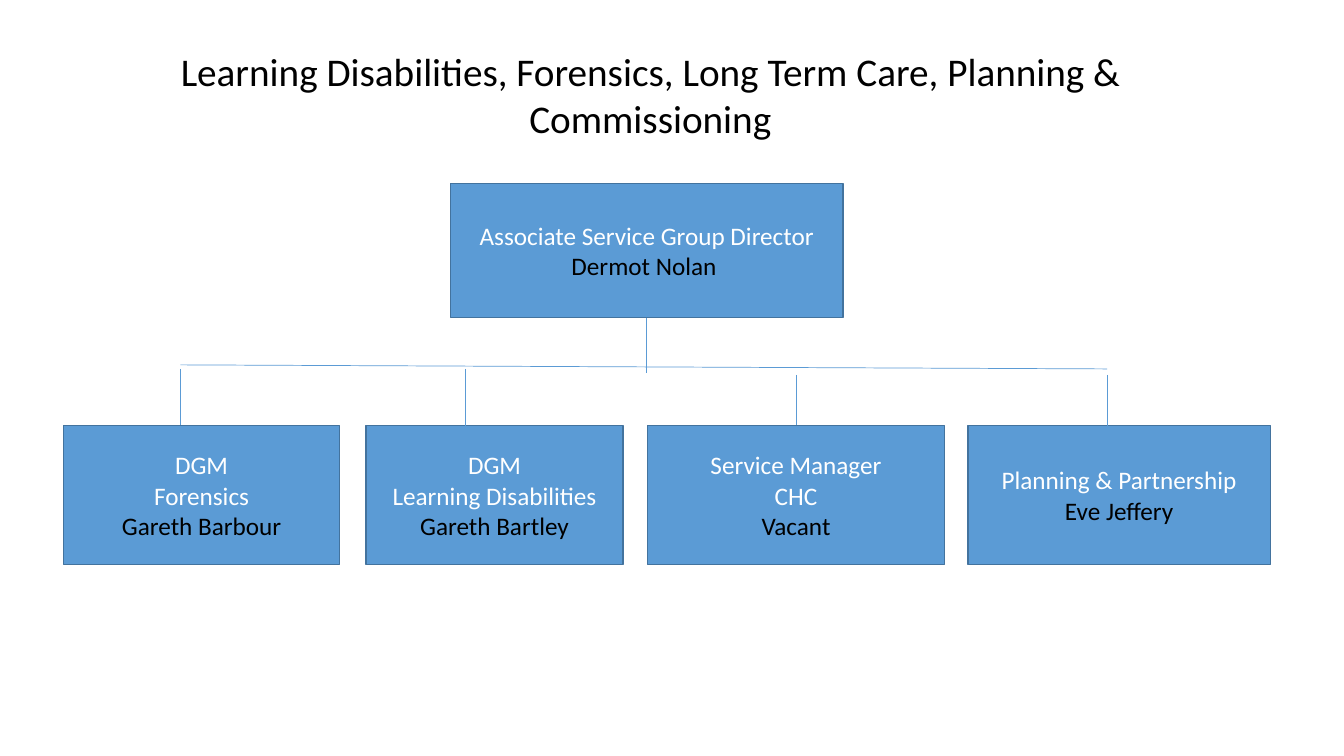
from lxml import etree
from pptx import Presentation
from pptx.dml.color import RGBColor
from pptx.enum.shapes import MSO_CONNECTOR, MSO_SHAPE
from pptx.enum.text import MSO_ANCHOR, PP_ALIGN
from pptx.oxml.ns import qn
from pptx.util import Inches, Pt

RECTANGLE = MSO_SHAPE.RECTANGLE
STRAIGHT = MSO_CONNECTOR.STRAIGHT
CENTER = PP_ALIGN.CENTER
TOP, MIDDLE = MSO_ANCHOR.TOP, MSO_ANCHOR.MIDDLE
TOP_SIDE, BOTTOM_SIDE = 0, 2

BLUE = RGBColor(0x5B, 0x9B, 0xD5)
DARK_BLUE = RGBColor(0x43, 0x73, 0x9E)
WHITE = RGBColor(0xFF, 0xFF, 0xFF)
BLACK = RGBColor(0, 0, 0)
FONT = "Calibri"

# Content
TITLE = "Learning Disabilities, Forensics, Long Term Care, Planning & Commissioning"
DIRECTOR = (["Associate Service Group Director"], "Dermot Nolan ")

# Role lines, person, box left, box width, and the stub above the box as
# (x, top, bottom); x None means the stub joins the middle of the box
TEAMS = [
    (["DGM", "Forensics"], "Gareth Barbour", 0.63, 2.74, (1.79, 3.66, 4.22)),
    (["DGM", "Learning Disabilities"], "Gareth Bartley", 3.63, 2.55, (4.62, 3.66, 4.29)),
    (["Service Manager", "CHC"], "Vacant", 6.42, 2.95, (None, 3.72, 4.22)),
    (["Planning & Partnership"], "Eve Jeffery", 9.6, 3, (10.98, 3.72, 4.27)),
]
TEAM_TOP, TEAM_HEIGHT = 4.22, 1.38
DIRECTOR_PLACE = (4.47, 1.82, 3.89, 1.33)
TRUNK_END = 3.7
BAR_START, BAR_END = (1.79, 3.62), (10.98, 3.66)

deck = Presentation()
deck.slide_width, deck.slide_height = Inches(13.33), Inches(7.5)
page = deck.slides.add_slide(deck.slide_layouts[6])


def write_lines(box, lines, size=18, anchor=MIDDLE):
    """Write (text, colour) pairs as centred paragraphs."""
    frame = box.text_frame
    frame.word_wrap = True
    frame.vertical_anchor = anchor
    for index, (text, color) in enumerate(lines):
        para = frame.paragraphs[0] if index == 0 else frame.add_paragraph()
        para.alignment = CENTER
        span = para.add_run()
        span.text = text
        span.font.name = FONT
        span.font.size = Pt(size)
        span.font.color.rgb = color


def add_post(roles, person, place):
    box = page.shapes.add_shape(RECTANGLE, *map(Inches, place))
    box.shadow.inherit = False
    box.fill.solid()
    box.fill.fore_color.rgb = BLUE
    box.line.color.rgb = DARK_BLUE
    box.line.width = Pt(1)
    write_lines(box, [(role, WHITE) for role in roles] + [(person, BLACK)])
    return box


def add_line(start, end):
    line = page.shapes.add_connector(STRAIGHT, *map(Inches, (*start, *end)))
    line.line.color.rgb = BLUE
    line.line.width = Pt(0.5)
    etree.SubElement(line._element.spPr, qn("a:effectLst"))
    return line


# Title
title = page.shapes.add_textbox(*map(Inches, (0.49, 0.42, 11.92, 1.04)))
write_lines(title, [(TITLE, BLACK)], size=28, anchor=TOP)

# Posts
director = add_post(*DIRECTOR, DIRECTOR_PLACE)
team_boxes = [
    add_post(roles, person, (left, TEAM_TOP, width, TEAM_HEIGHT))
    for roles, person, left, width, stub in TEAMS
]

# Bar and trunk
add_line(BAR_START, BAR_END)
left, top, width, height = DIRECTOR_PLACE
trunk_x = left + width / 2
trunk = add_line((trunk_x, top + height), (trunk_x, TRUNK_END))
trunk.begin_connect(director, BOTTOM_SIDE)

# Stubs
for box, (roles, person, left, width, stub) in zip(team_boxes, TEAMS):
    x, top, bottom = stub
    joined = x is None
    if joined:
        x = left + width / 2
    line = add_line((x, top), (x, bottom))
    if joined:
        line.end_connect(box, TOP_SIDE)

deck.save("out.pptx")
